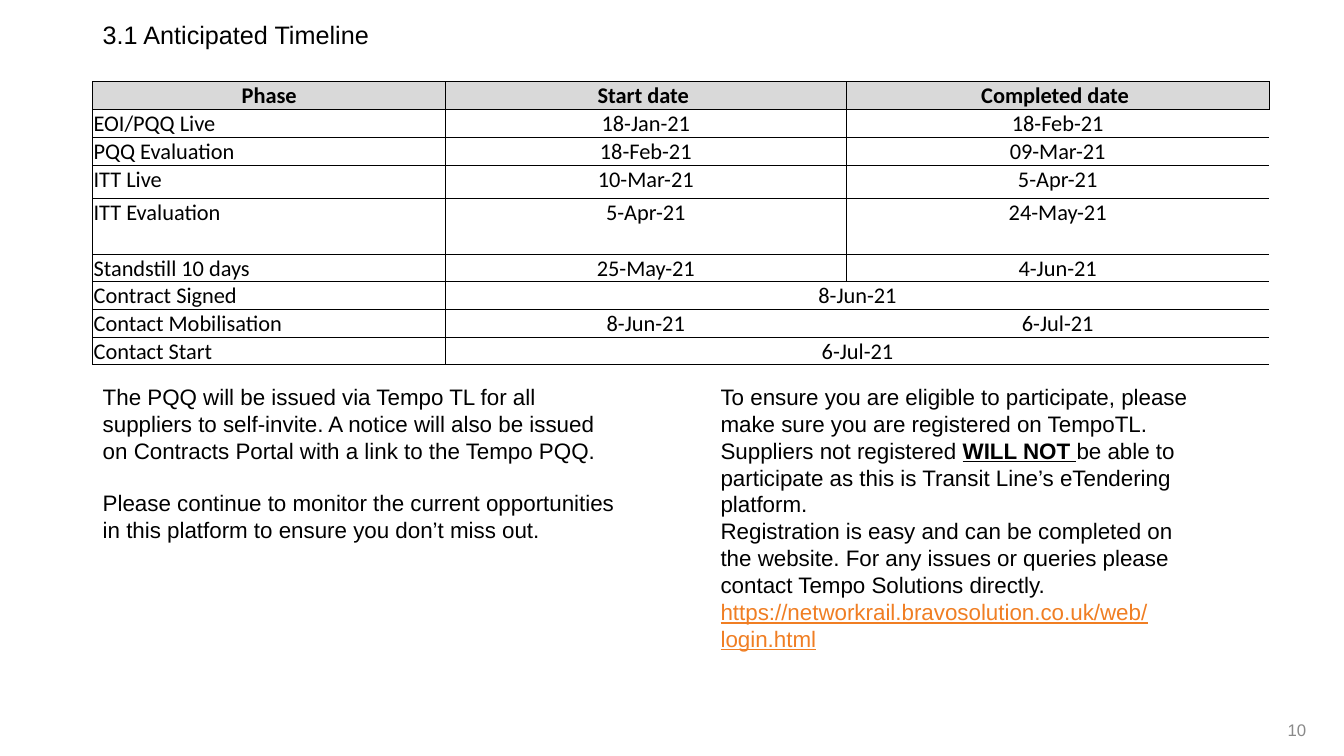
from dataclasses import dataclass
from lxml.etree import SubElement as Sub
from pptx import Presentation
from pptx.dml.color import RGBColor
from pptx.enum.text import MSO_ANCHOR as Anchor, PP_ALIGN as Align
from pptx.oxml.ns import qn
from pptx.slide import Slide
from pptx.table import Table, _Cell as Cell
from pptx.text.text import Font, TextFrame as Frame
from pptx.util import Cm, Pt

BLACK = RGBColor(0x00, 0x00, 0x00)
GREY = RGBColor(0x89, 0x89, 0x89)
SILVER = RGBColor(0xD9, 0xD9, 0xD9)
ORANGE = RGBColor(0xF0, 0x7E, 0x23)


@dataclass
class Span:
    text: str
    bold: bool = False
    line: bool = False
    color: RGBColor = BLACK


@dataclass
class Para:
    spans: list[Span]
    gap: float = 0


@dataclass
class Box:
    left: float
    top: float
    width: float
    height: float
    paras: list[Para]
    size: int = 16


@dataclass
class Phase:
    name: str
    start: str
    end: str = ""
    height: float = 0.7
    split: bool = True


BOXES = [
    Box(2.34, 0.36, 25.65, 1.02, [Para([Span("3.1 Anticipated Timeline")])], 18),
    Box(2.34, 9.53, 13.61, 4.37, [
        Para([Span("The PQQ will be issued via Tempo TL for all suppliers to "
                   "self-invite. A notice will also be issued on Contracts "
                   "Portal with a link to the Tempo PQQ.")]),
        Para([Span("Please continue to monitor the current opportunities in "
                   "this platform to ensure you don’t miss out.")], 18.4),
    ]),
    Box(17.91, 9.53, 12.27, 7.77, [
        Para([Span("To ensure you are eligible to participate, please make "
                   "sure you are registered on TempoTL.")]),
        Para([Span("Suppliers not registered "),
              Span("WILL NOT ", bold=True, line=True),
              Span("be able to participate as this is Transit Line’s "
                   "eTendering platform.")]),
        Para([Span("Registration is easy and can be completed on the website. "
                   "For any issues or queries please contact Tempo Solutions "
                   "directly.")]),
        Para([Span("https://networkrail.bravosolution.co.uk/web/login.html",
                   line=True, color=ORANGE)]),
    ]),
]

PHASES = [
    Phase("Phase", "Start date ", "Completed date "),
    Phase("EOI/PQQ Live", "18-Jan-21", "18-Feb-21"),
    Phase("PQQ Evaluation", "18-Feb-21", "09-Mar-21"),
    Phase("ITT Live", "10-Mar-21", "5-Apr-21", 0.83),
    Phase("ITT Evaluation", "5-Apr-21", "24-May-21", 1.41),
    Phase("Standstill 10 days", "25-May-21", "4-Jun-21"),
    Phase("Contract Signed", "8-Jun-21", split=False),
    Phase("Contact Mobilisation", "8-Jun-21", "6-Jul-21", split=False),
    Phase("Contact Start", "6-Jul-21", split=False),
]
WIDTHS = [8.89, 10.09, 10.67]


def set_font(font: Font, name: str, size: int, color: RGBColor) -> None:
    font.name = name
    font.size = Pt(size)
    font.color.rgb = color


def add_frame(slide: Slide, left: float, top: float,
              width: float, height: float) -> Frame:
    shape = slide.shapes.add_textbox(Cm(left), Cm(top), Cm(width), Cm(height))
    shape.text_frame.word_wrap = True
    return shape.text_frame


def add_box(slide: Slide, box: Box) -> None:
    frame = add_frame(slide, box.left, box.top, box.width, box.height)
    for i, item in enumerate(box.paras):
        para = frame.add_paragraph() if i else frame.paragraphs[0]
        if item.gap:
            para.space_before = Pt(item.gap)
        set_font(para.font, "Arial", box.size, item.spans[0].color)
        for span in item.spans:
            run = para.add_run()
            run.text = span.text
            set_font(run.font, "Arial", box.size, span.color)
            run.font.bold = span.bold
            run.font.underline = span.line


def add_edge(cell: Cell, side: str, width: float) -> None:
    props = cell._tc.get_or_add_tcPr()
    line = Sub(props, qn(f"a:{side}"), w=str(Pt(width)))
    if width:
        fill = Sub(line, qn("a:solidFill"))
        Sub(fill, qn("a:srgbClr"), val=str(BLACK))
    else:
        Sub(line, qn("a:noFill"))


def add_edges(cell: Cell, row: int, col: int) -> None:
    split = PHASES[row].split
    last = row == len(PHASES) - 1
    left = [1, 0.5, 0.5 if split else 0][col]
    right = [0.5, 0.5 if split else 0, 0 if row else 0.5][col]
    add_edge(cell, "lnL", left)
    add_edge(cell, "lnR", right)
    add_edge(cell, "lnT", 1 if row < 2 else 0.5)
    add_edge(cell, "lnB", 1 if row == 0 or last else 0.5)


def fill_cell(cell: Cell, text: str, row: int, col: int) -> None:
    head = row == 0
    cell.margin_left = cell.margin_right = cell.margin_top = Cm(0.02)
    cell.margin_bottom = 0
    cell.vertical_anchor = Anchor.BOTTOM if head else Anchor.TOP
    add_edges(cell, row, col)
    if head:
        cell.fill.solid()
        cell.fill.fore_color.rgb = SILVER
    else:
        cell.fill.background()
    para = cell.text_frame.paragraphs[0]
    para.text = text
    para.alignment = Align.CENTER if head or col else Align.LEFT
    set_font(para.font, "Calibri", 16, BLACK)
    para.font.bold = head


def add_phases(slide: Slide) -> None:
    high = sum(phase.height for phase in PHASES)
    shape = slide.shapes.add_table(len(PHASES), len(WIDTHS), Cm(2.34), Cm(2.06),
                                   Cm(sum(WIDTHS)), Cm(high))
    table: Table = shape.table
    table.first_row = table.horz_banding = False
    for col, width in zip(table.columns, WIDTHS):
        col.width = Cm(width)
    for i, phase in enumerate(PHASES):
        table.rows[i].height = Cm(phase.height)
        for j, text in enumerate((phase.name, phase.start, phase.end)):
            fill_cell(table.cell(i, j), text, i, j)
        if not phase.end:
            table.cell(i, 1).merge(table.cell(i, 2))


def add_number(slide: Slide) -> None:
    frame = add_frame(slide, 30.81, 18.14, 2.36, 0.51)
    frame.margin_top = frame.margin_bottom = 0
    frame.vertical_anchor = Anchor.MIDDLE
    para = frame.paragraphs[0]
    para.text = "10"
    para.alignment = Align.RIGHT
    set_font(para.font, "Arial", 12, GREY)


def main() -> None:
    deck = Presentation()
    deck.slide_width = Cm(33.87)
    deck.slide_height = Cm(19.05)
    slide = deck.slides.add_slide(deck.slide_layouts[6])
    add_number(slide)
    for box in BOXES:
        add_box(slide, box)
    add_phases(slide)
    deck.save("out.pptx")


if __name__ == "__main__":
    main()
